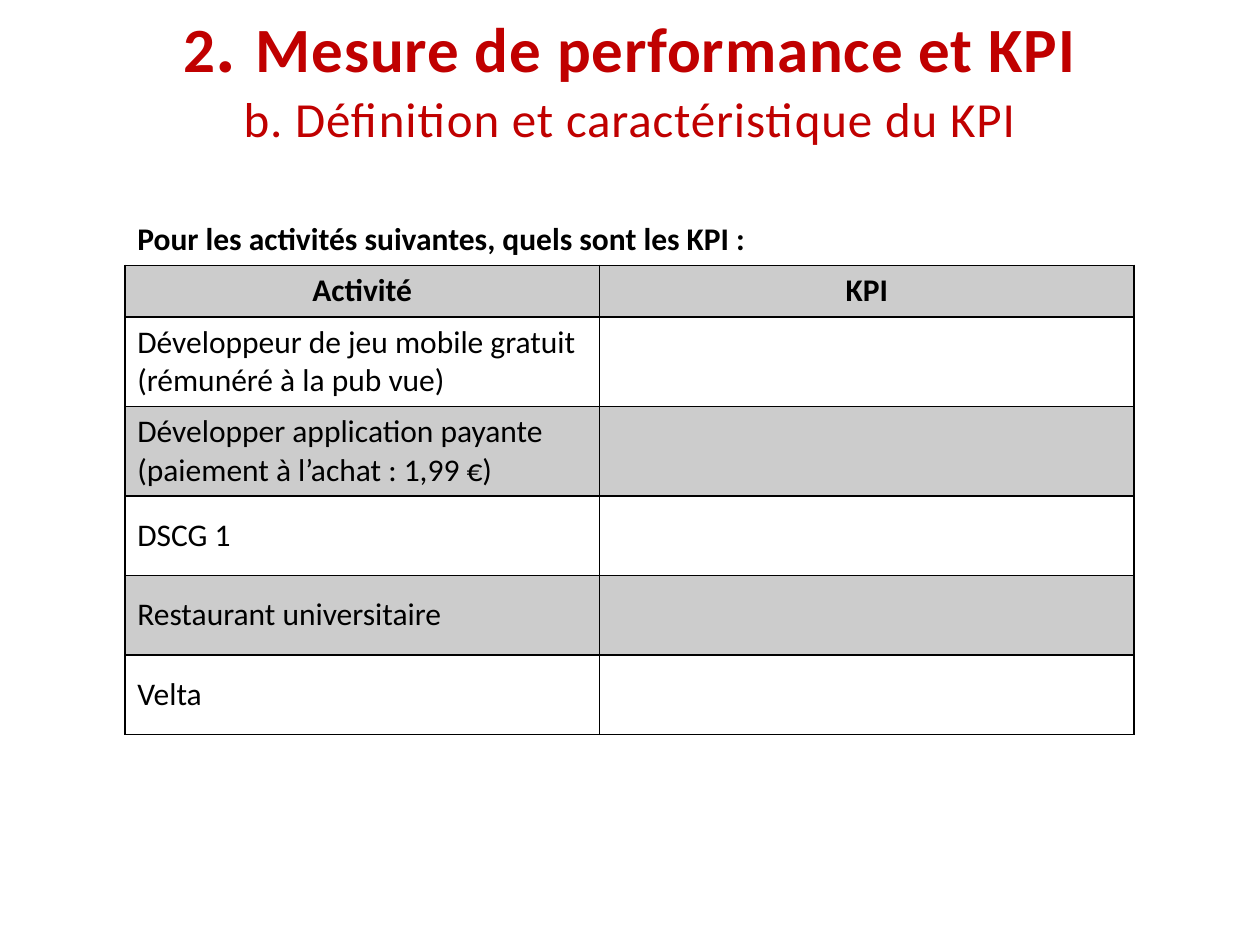
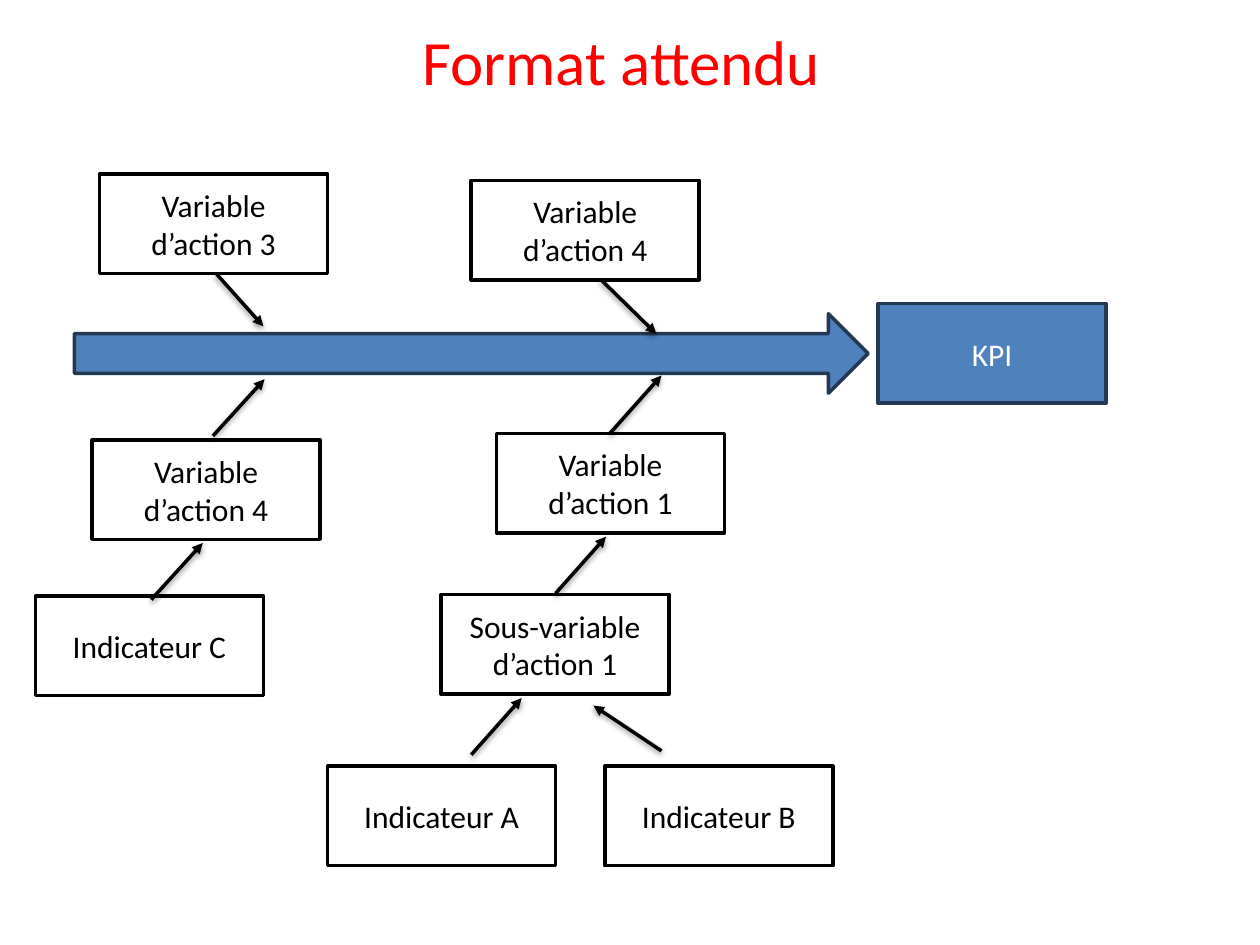
"""Build two slides on performance measurement and KPIs."""
from dataclasses import dataclass

from lxml import etree
from pptx import Presentation
from pptx import util as u
from pptx.dml import color
from pptx.enum import shapes, text
from pptx.oxml import ns

BLACK = color.RGBColor(0x00, 0x00, 0x00)
WHITE = color.RGBColor(0xFF, 0xFF, 0xFF)
DARK_RED = color.RGBColor(0xC0, 0x00, 0x00)
RED = color.RGBColor(0xFF, 0x00, 0x00)
BLUE = color.RGBColor(0x4F, 0x81, 0xBD)
NAVY = color.RGBColor(0x23, 0x39, 0x53)

FONT = "Calibri"
TITLE_SIZE = 36
BODY_SIZE = 18
BOX_WIDTH, BOX_HEIGHT = 130.3, 56.9
LEFT, CENTER = text.PP_ALIGN.LEFT, text.PP_ALIGN.CENTER
MIDDLE, TOP = text.MSO_ANCHOR.MIDDLE, text.MSO_ANCHOR.TOP


@dataclass(frozen=True)
class Span:
    """A run of text with its format."""
    words: str
    size: float = BODY_SIZE
    ink: color.RGBColor = BLACK
    bold: bool = False
    spacing: int = 0


@dataclass(frozen=True)
class Block:
    """A filled and outlined shape with an optional label."""
    label: str
    left: float
    top: float
    width: float = BOX_WIDTH
    height: float = BOX_HEIGHT
    kind: shapes.MSO_SHAPE = shapes.MSO_SHAPE.RECTANGLE
    fill: color.RGBColor = WHITE
    outline: color.RGBColor = BLACK
    ink: color.RGBColor = BLACK


@dataclass(frozen=True)
class Arrow:
    """A straight arrow between two points."""
    x1: float
    y1: float
    x2: float
    y2: float


@dataclass(frozen=True)
class Row:
    """A table row: its height, cell paragraphs and format."""
    height: float
    cells: tuple[tuple[str, ...], ...]
    shaded: bool = False
    bold: bool = False
    align: text.PP_ALIGN = LEFT


QUESTION = Row(29.2, (("Pour les activités suivantes, quels sont les KPI :",), ()), bold=True)
ROWS = (
    QUESTION,
    Row(29.5, (("Activité",), ("KPI",)), True, True, CENTER),
    Row(51.2, (("Développeur de jeu mobile gratuit (rémunéré à la pub vue)",), ())),
    Row(51.2, (("Développer application payante", "(paiement à l’achat : 1,99 €)"), ()), True),
    Row(45.4, (("DSCG 1",), ())),
    Row(45.4, (("Restaurant universitaire",), ()), True),
    Row(45.4, (("Velta",), ())),
)
COLUMN_WIDTHS = (271.4, 305.3)

BLOCKS = (
    Block("KPI", 501.8, 173.5, fill=BLUE, outline=NAVY, ink=WHITE),
    Block("", 42.5, 179.3, 453.6, 45.4, shapes.MSO_SHAPE.RIGHT_ARROW, BLUE, NAVY),
    Block("Variable d’action 1", 283.7, 247.7),
    Block("Variable d’action 3", 56.9, 99.4),
    Block("Variable d’action 4", 269.3, 103),
    Block("Sous-variable d’action 1", 252, 339.8),
    Block("Indicateur A", 187.2, 437.8),
    Block("Indicateur B", 345.6, 437.8),
    Block("Indicateur C", 20.2, 340.6),
    Block("Variable d’action 4", 52.6, 251.3),
)
ARROWS = (
    Arrow(123.5, 156.3, 150.5, 186.5),
    Arrow(348.5, 247.7, 378, 214.6),
    Arrow(343.5, 159.9, 375.1, 190.8),
    Arrow(317.5, 339.1, 346.3, 306.7),
    Arrow(86.4, 342.7, 115.9, 310.3),
    Arrow(121.7, 249.1, 151.2, 216.7),
    Arrow(269.3, 431.3, 298.1, 398.9),
    Arrow(378, 429.1, 339.1, 403.2),
)


def add_node(parent: etree.ElementBase, tag: str, **values: object) -> etree.ElementBase:
    """Append a drawing element with the given attributes."""
    return etree.SubElement(parent, ns.qn(f"a:{tag}"), {k: str(v) for k, v in values.items()})


def write(frame: object, lines: list[list[Span]], align: text.PP_ALIGN) -> None:
    """Write one paragraph for each list of spans."""
    for index, spans in enumerate(lines):
        para = frame.paragraphs[0] if index == 0 else frame.add_paragraph()
        para.alignment = align
        for span in spans:
            run = para.add_run()
            run.text = span.words
            formats = {"name": FONT, "size": u.Pt(span.size), "bold": span.bold}
            for name, value in formats.items():
                setattr(run.font, name, value)
            run.font.color.rgb = span.ink
            if span.spacing:
                run._r.get_or_add_rPr().set("spc", str(span.spacing))


def add_title(page: object, lines: list[list[Span]], left: float, top: float,
              height: float, inset: float = 3.6) -> None:
    """Add a centred title at the top of a slide."""
    box = page.shapes.add_textbox(u.Pt(left), u.Pt(top), u.Pt(648), u.Pt(height))
    formats = {"word_wrap": True, "vertical_anchor": TOP, "margin_top": u.Pt(inset)}
    for name, value in formats.items():
        setattr(box.text_frame, name, value)
    write(box.text_frame, lines, CENTER)


def add_block(page: object, block: Block) -> None:
    """Draw a block with its label in the middle."""
    places = map(u.Pt, (block.left, block.top, block.width, block.height))
    box = page.shapes.add_shape(block.kind, *places)
    box.shadow.inherit = False
    box.fill.solid()
    box.fill.fore_color.rgb = block.fill
    box.line.color.rgb = block.outline
    box.line.width = u.Pt(2)
    if block.label:
        box.text_frame.word_wrap = True
        box.text_frame.vertical_anchor = MIDDLE
        write(box.text_frame, [[Span(block.label, ink=block.ink)]], CENTER)


def add_arrow(page: object, arrow: Arrow) -> None:
    """Draw an arrow with a soft shadow below it."""
    ends = map(u.Pt, (arrow.x1, arrow.y1, arrow.x2, arrow.y2))
    line = page.shapes.add_connector(shapes.MSO_CONNECTOR.STRAIGHT, *ends)
    line.line.color.rgb = BLACK
    line.line.width = u.Pt(2)
    add_node(line.line._get_or_add_ln(), "tailEnd", type="triangle")
    effects = add_node(line._element.spPr, "effectLst")
    shadow = add_node(effects, "outerShdw", blurRad=u.Pt(3.1), dist=u.Pt(1.6),
                      dir=5400000, rotWithShape=0)
    add_node(add_node(shadow, "srgbClr", val=BLACK), "alpha", val=38000)


def format_cell(cell: object, shaded: bool, sides: str) -> None:
    """Set the borders of a cell and its translucent fill."""
    properties = cell._tc.get_or_add_tcPr()
    for side in sides:
        border = add_node(properties, f"ln{side}", w=u.Pt(1))
        add_node(add_node(border, "solidFill"), "srgbClr", val=BLACK)
    if shaded:
        tint = add_node(add_node(properties, "solidFill"), "srgbClr", val=BLACK)
        add_node(tint, "alpha", val=20000)
    else:
        cell.fill.background()


def add_activity_table(page: object) -> None:
    """Add the table of activities and their KPIs."""
    size = sum(COLUMN_WIDTHS), sum(row.height for row in ROWS)
    table = page.shapes.add_table(len(ROWS), len(COLUMN_WIDTHS), u.Pt(71.3), u.Pt(122.4),
                                  *map(u.Pt, size)).table
    table.first_row = table.horz_banding = False
    for column, width in zip(table.columns, COLUMN_WIDTHS):
        column.width = u.Pt(width)
    for index, row in enumerate(ROWS):
        table.rows[index].height = u.Pt(row.height)
        for column, lines in enumerate(row.cells):
            cell = table.cell(index, column)
            format_cell(cell, row.shaded, "B" if row is QUESTION else "LRTB")
            cell.vertical_anchor = TOP if row is QUESTION else MIDDLE
            write(cell.text_frame, [[Span(line, bold=row.bold)] for line in lines], row.align)
    table.cell(0, 0).merge(table.cell(0, 1))


def main() -> None:
    """Build and save the deck."""
    deck = Presentation()
    deck.slide_width, deck.slide_height = u.Pt(720), u.Pt(540)
    blank = deck.slide_layouts[6]

    page = deck.slides.add_slide(blank)
    heading = [
        Span("2", TITLE_SIZE, DARK_RED, True, 50),
        Span(". ", 44, DARK_RED, True, 50),
        Span("Mesure de performance et KPI", TITLE_SIZE, DARK_RED, True, 50),
    ]
    subheading = [Span("b. Définition et caractéristique du KPI", 28, DARK_RED, spacing=50)]
    add_title(page, [heading, subheading], 36, -8, 90, 5.5)
    add_activity_table(page)

    page = deck.slides.add_slide(blank)
    add_title(page, [[Span("Format attendu", TITLE_SIZE, RED)]], 31, 9.4, 45.4)
    for block in BLOCKS:
        add_block(page, block)
    for arrow in ARROWS:
        add_arrow(page, arrow)

    deck.save("out.pptx")


if __name__ == "__main__":
    main()
